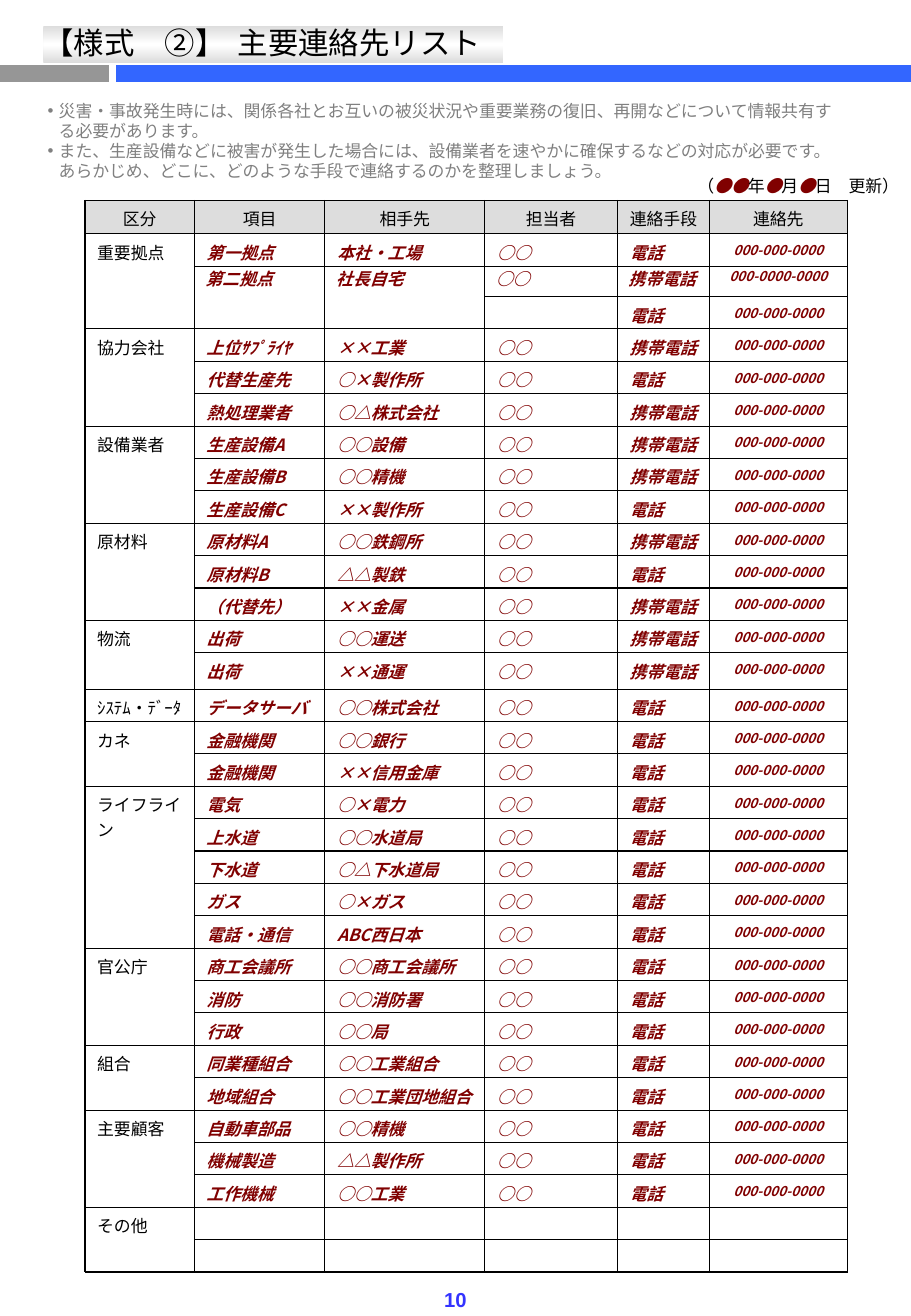
from copy import deepcopy
from lxml import etree
from pptx import Presentation, util as u
from pptx.dml.color import RGBColor
from pptx.enum import shapes, text
from pptx.oxml.ns import qn

SCALE = 7620
NOTO = "Noto Sans CJK JP"
BLACK, GREY, RED = "000000", "DDDDDD", "800000"
LEFT, MID, RIGHT = text.PP_ALIGN.LEFT, text.PP_ALIGN.CENTER, text.PP_ALIGN.RIGHT
TEL, CELL = "電話", "携帯電話"
HEADS = ["区分", "項目", "相手先", "担当者", "連絡手段", "連絡先"]
COLS = [108, 129, 158, 131, 91, 136]
GROUPS = [
    ("重要拠点", [("第一拠点", "本社・工場", TEL), ("第二拠点", "社長自宅", CELL), ("", "", TEL)]),
    ("協力会社", [("上位ｻﾌﾟﾗｲﾔ", "××工業", CELL), ("代替生産先", "○×製作所", TEL),
              ("熱処理業者", "○△株式会社", CELL)]),
    ("設備業者", [("生産設備A", "○○設備", CELL), ("生産設備B", "○○精機", CELL),
              ("生産設備C", "××製作所", TEL)]),
    ("原材料", [("原材料A", "○○鉄鋼所", CELL), ("原材料B", "△△製鉄", TEL),
             ("（代替先）", "××金属", CELL)]),
    ("物流", [("出荷", "○○運送", CELL), ("出荷", "××通運", CELL)]),
    ("ｼｽﾃﾑ・ﾃﾞｰﾀ", [("データサーバ", "○○株式会社", TEL)]),
    ("カネ", [("金融機関", "○○銀行", TEL), ("金融機関", "××信用金庫", TEL)]),
    ("ライフライン", [("電気", "○×電力", TEL), ("上水道", "○○水道局", TEL),
                ("下水道", "○△下水道局", TEL), ("ガス", "○×ガス", TEL),
                ("電話・通信", "ABC西日本", TEL)]),
    ("官公庁", [("商工会議所", "○○商工会議所", TEL), ("消防", "○○消防署", TEL),
             ("行政", "○○局", TEL)]),
    ("組合", [("同業種組合", "○○工業組合", TEL), ("地域組合", "○○工業団地組合", TEL)]),
    ("主要顧客", [("自動車部品", "○○精機", TEL), ("機械製造", "△△製作所", TEL),
              ("工作機械", "○○工業", TEL)]),
    ("その他", [("", "", ""), ("", "", "")]),
]
NOTES = [
    "災害・事故発生時には、関係各社とお互いの被災状況や重要業務の復旧、再開などについて情報共有する必要があります。",
    "また、生産設備などに被害が発生した場合には、設備業者を速やかに確保するなどの対応が必要です。"
    "あらかじめ、どこに、どのような手段で連絡するのかを整理しましょう。",
]


def px(n):
    return u.Emu(n * SCALE)


def tint(code):
    return RGBColor.from_string(code)


def write(para, words, size=10, font=NOTO, color=BLACK, bold=False, slant=False, align=LEFT):
    run = para.add_run()
    run.text = words
    face = run.font
    face.size, face.name, face.bold, face.italic = u.Pt(size), font, bold, slant
    face.color.rgb = tint(color)
    etree.SubElement(run._r.get_or_add_rPr(), qn("a:ea")).set("typeface", NOTO)
    para.alignment = align
    para.space_before = u.Pt(0)


def place(shape, box):
    shape.left, shape.top, shape.width, shape.height = map(px, box)


def frame(shape, wrap=True, anchor=text.MSO_ANCHOR.TOP):
    body = shape.text_frame
    body.word_wrap, body.vertical_anchor = wrap, anchor
    body.auto_size = text.MSO_AUTO_SIZE.NONE
    body.margin_left = body.margin_right = px(12)
    body.margin_top = body.margin_bottom = px(6)
    return body


def label(slide, box, **form):
    shape = slide.shapes.add_textbox(*map(px, box))
    return frame(shape, **form)


def rule(slide, start, end, y, color):
    line = slide.shapes.add_connector(shapes.MSO_CONNECTOR.STRAIGHT, px(start), px(y), px(end), px(y))
    line.line.color.rgb = tint(color)
    line.line.width = u.Pt(10)
    etree.SubElement(line._element.spPr, qn("a:effectLst"))


def header(slide, box):
    x, y, w, h = box
    rule(slide, x, x + 108, y + 73, "969696")
    rule(slide, x + 115, x + w, y + 73, "3366FF")
    band = slide.shapes.add_shape(shapes.MSO_SHAPE.RECTANGLE, px(x + 43), px(y + 26), px(454), px(36))
    band.shadow.inherit = False
    band.line.fill.background()
    band.fill.gradient()
    band.fill.gradient_angle = 90
    stops = band._element.spPr.find(".//" + qn("a:gsLst"))
    stops.append(deepcopy(stops[0]))
    for stop, color, spot in zip(band.fill.gradient_stops, (GREY, "FFFFFF", GREY), (0, 0.5, 1)):
        stop.color.rgb, stop.position = tint(color), spot
    title = slide.shapes.title
    title._element.addprevious(band._element)
    place(title, (x + 223, y + 18, 320, 48))
    tag = label(slide, (x + 31, y + 18, 234, 48), wrap=False, anchor=text.MSO_ANCHOR.MIDDLE)
    head = frame(title, anchor=text.MSO_ANCHOR.MIDDLE)
    for body, words in ((head, "主要連絡先リスト"), (tag, "【様式　②】　")):
        write(body.paragraphs[0], words, size=18, font="Arial")


def notes(slide, box):
    shape = slide.placeholders[1]
    place(shape, box)
    body = frame(shape)
    for i, words in enumerate(NOTES):
        para = body.add_paragraph() if i else body.paragraphs[0]
        write(para, words, color="808080")
        para.line_spacing = 1.0
        props = para._p.get_or_add_pPr()
        props.set("marL", str(px(11)))
        props.set("indent", str(px(-11)))
        etree.SubElement(props, qn("a:buChar")).set("char", "•")


def date(slide, box):
    para = label(slide, box).paragraphs[0]
    for words in ("（", "●●", "年", "●", "月", "●", "日　更新）"):
        dot = "●" in words
        write(para, words, font="Arial", color=RED if dot else BLACK, slant=dot, align=RIGHT)


def edge(cell, thick=()):
    props = cell._tc.get_or_add_tcPr()
    for i, side in enumerate(("lnL", "lnR", "lnT", "lnB")):
        line = etree.Element(qn("a:" + side), w=str(u.Pt(1 if side in thick else 0.75)))
        fill = etree.SubElement(line, qn("a:solidFill"))
        etree.SubElement(fill, qn("a:srgbClr")).set("val", BLACK)
        props.insert(i, line)


def fill(cell, words, row, col):
    tight = row == 2 and col
    side = 0 if tight else 6
    cell.margin_left = px(11 if tight else 12)
    if row == 0 or col == 5:
        cell.margin_left = px(side)
    cell.margin_right, cell.margin_top, cell.margin_bottom = px(side), px(side), 0
    if row:
        cell.fill.background()
    else:
        cell.fill.solid()
        cell.fill.fore_color.rgb = tint(GREY)
    edge(cell, {2: ("lnB",), 3: ("lnT",)}.get(row, ()) if col > 2 else ())
    para = cell.text_frame.paragraphs[0]
    if words:
        red = bool(row and col)
        write(para, words, size=8 if red and col == 5 else 10, color=RED if red else BLACK,
              bold=red, slant=red, align=MID if row == 0 or col == 5 else LEFT)
    else:
        etree.SubElement(para._p, qn("a:endParaRPr")).set("sz", "1000")


def contacts(slide, x, y):
    rows, spans = [HEADS], []
    for name, items in GROUPS:
        spans.append((len(rows), len(items)))
        for i, (item, firm, means) in enumerate(items):
            phone = "000-0000-0000" if item == "第二拠点" else "000-000-0000"
            rows.append([name if i == 0 else "", item, firm, "○○" if item else "",
                         means, phone if means else ""])
    highs = [{0: 33, 2: 30, 14: 36}.get(i, 32) for i in range(len(rows))]
    grid = slide.shapes.add_table(len(rows), len(COLS), px(x), px(y), px(sum(COLS)), px(sum(highs))).table
    grid.first_row = grid.horz_banding = False
    for col, wide in zip(grid.columns, COLS):
        col.width = px(wide)
    for r, (line, high) in enumerate(zip(rows, highs)):
        grid.rows[r].height = px(high)
        for c, words in enumerate(line):
            fill(grid.cell(r, c), words, r, c)
    for top, count in spans:
        if count > 1:
            grid.cell(top, 0).merge(grid.cell(top + count - 1, 0))
    for c in (1, 2):
        grid.cell(2, c).merge(grid.cell(3, c))


def footer(slide, box):
    para = label(slide, box, wrap=False).paragraphs[0]
    write(para, "10", size=12, font="Arial", color="3333FF", bold=True, align=MID)


def main():
    deck = Presentation()
    deck.slide_width, deck.slide_height = px(900), px(1300)
    slide = deck.slides.add_slide(deck.slide_layouts[1])
    header(slide, (0, 0, 900, 80))
    notes(slide, (35, 93, 812, 92))
    contacts(slide, 84, 198)
    date(slide, (598, 168, 302, 32))
    footer(slide, (427, 1266, 46, 36))
    deck.save("out.pptx")


if __name__ == "__main__":
    main()
